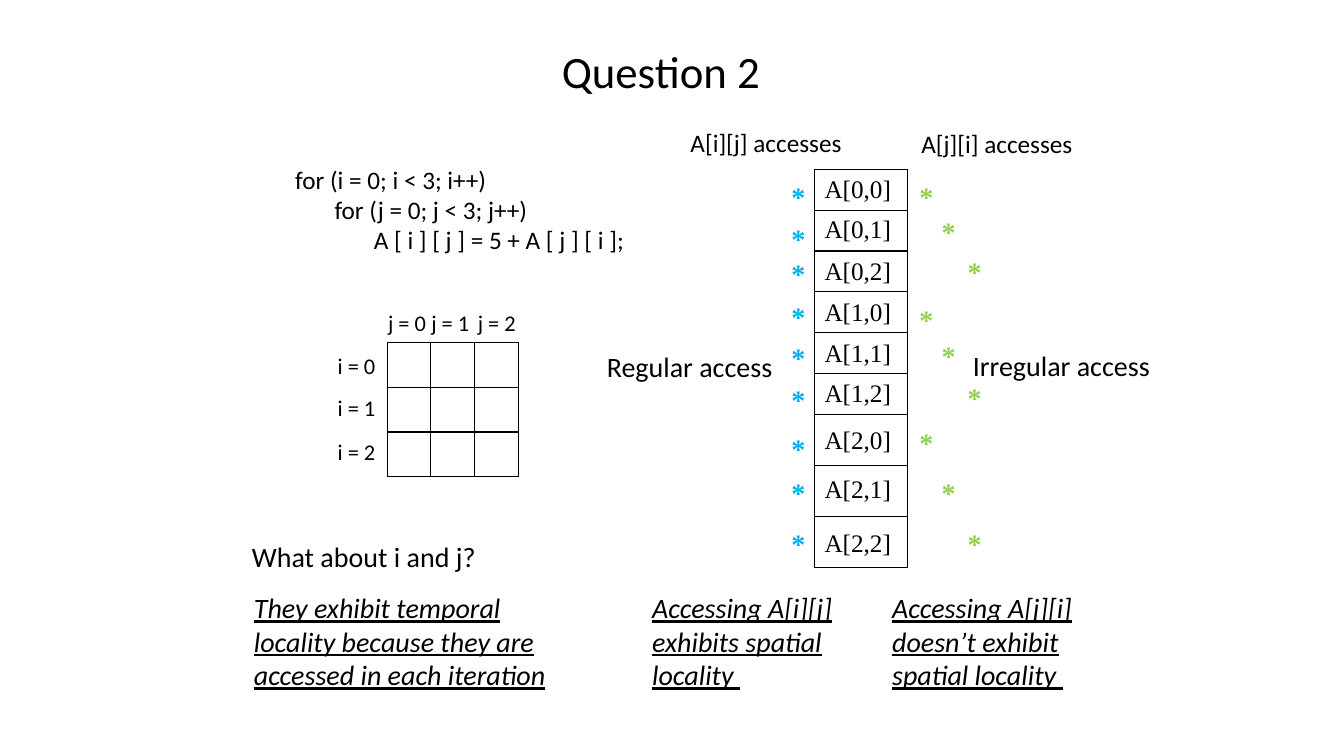
from dataclasses import dataclass

from lxml.etree import SubElement
from pptx import Presentation
from pptx.dml.color import RGBColor
from pptx.enum.text import MSO_ANCHOR, MSO_AUTO_SIZE, PP_ALIGN
from pptx.oxml import parse_xml
from pptx.oxml.ns import nsdecls, qn
from pptx.util import Inches, Pt


@dataclass(frozen=True)
class Theme:
    sans: str = "Calibri"
    serif: str = "Times New Roman"
    ink: str = "000000"
    regular: str = "00B0F0"
    irregular: str = "92D050"
    title: int = 32
    large: int = 20
    normal: int = 18
    small: int = 16
    rule: float = 1


theme = Theme()
deck = Presentation()
deck.slide_width = Inches(13.33)
deck.slide_height = Inches(7.5)
page = deck.slides.add_slide(deck.slide_layouts[5])


def add_text(text, left=0, top=0, width=1, height=0.4, size=theme.normal, font=theme.sans,
             color=theme.ink, bold=False, emphasis=False, wrap=False, indent=0, box=None):
    if box is None:
        box = page.shapes.add_textbox(Inches(left), Inches(top), Inches(width), Inches(height))
        box.text_frame.auto_size = MSO_AUTO_SIZE.SHAPE_TO_FIT_TEXT
    frame = box.text_frame
    frame.word_wrap = wrap
    for level, line in enumerate(text.split("\n")):
        para = frame.add_paragraph() if level else frame.paragraphs[0]
        if indent and level:
            para._p.get_or_add_pPr().set("marL", str(Inches(indent * level)))
        span = para.add_run()
        span.text = line
        span.font.name = font
        span.font.size = Pt(size)
        span.font.color.rgb = RGBColor.from_string(color)
        span.font.bold = bold
        span.font.italic = emphasis
        span.font.underline = emphasis
    return box


def add_grid(left, top, column_widths, row_heights):
    frame = page.shapes.add_table(len(row_heights), len(column_widths), Inches(left), Inches(top),
                                  Inches(sum(column_widths)), Inches(sum(row_heights)))
    table = frame.table
    table.first_row = False
    table.horz_banding = False
    for column, width in zip(table.columns, column_widths):
        column.width = Inches(width)
    for row, height in zip(table.rows, row_heights):
        row.height = Inches(height)
    for cell in table.iter_cells():
        cell.fill.background()
        properties = cell._tc.get_or_add_tcPr()
        for place, side in enumerate(("lnL", "lnR", "lnT", "lnB")):
            border = parse_xml(f'<a:{side} {nsdecls("a")} w="{Pt(theme.rule)}"/>')
            fill = SubElement(border, qn("a:solidFill"))
            SubElement(fill, qn("a:srgbClr")).set("val", theme.ink)
            properties.insert(place, border)


title = page.shapes.title
title.left, title.top = Inches(0.89), Inches(0.08)
title.width, title.height = Inches(11.33), Inches(1.25)
title.text_frame.vertical_anchor = MSO_ANCHOR.MIDDLE
add_text("Question 2", box=title, size=theme.title, wrap=True)
title.text_frame.paragraphs[0].alignment = PP_ALIGN.CENTER

add_text("for (i = 0; i < 3; i++)\nfor (j = 0; j < 3; j++)\nA [ i ] [ j ] = 5 + A [ j ] [ i ];",
         2.83, 1.58, 4.06, 1.01, wrap=True, indent=0.39)

add_grid(3.84, 3.4, [1.3 / 3] * 3, [1.33 / 3] * 3)
for index, (row_top, column_left) in enumerate(zip((3.44, 3.86, 4.3), (3.75, 4.18, 4.64))):
    add_text(f"i = {index}", 3.25, row_top, 0.58, 0.37, size=theme.small)
    add_text(f"j = {index}", column_left, 3.02, 0.58, 0.37, size=theme.small)

add_grid(8.08, 1.68, [0.92], [2.43 / 6] * 6 + [1.52 / 3] * 3)
label_tops = (1.67, 2.07, 2.48, 2.89, 3.3, 3.69, 4.16, 4.65, 5.18)
regular_tops = (1.73, 2.15, 2.5, 2.92, 3.33, 3.75, 4.23, 4.67, 5.17)
irregular_tops = (1.73, 2.08, 2.48, 2.95, 3.31, 3.73, 4.17, 4.67, 5.17)
irregular_lefts = (9.02, 9.24, 9.5)
star = dict(width=0.34, height=0.44, size=theme.large, font=theme.serif, bold=True)
for index, (label_top, regular_top, irregular_top) in enumerate(
        zip(label_tops, regular_tops, irregular_tops)):
    i, j = divmod(index, 3)
    add_text(f"A[{i},{j}]", 8.08, label_top, 0.87, font=theme.serif)
    add_text("*", 7.75, regular_top, color=theme.regular, **star)
    add_text("*", irregular_lefts[j], irregular_top, color=theme.irregular, **star)

add_text("A[i][j] accesses", 6.75, 1.21, 1.71)
add_text("A[j][i] accesses", 9.04, 1.22, 1.71)
add_text("Regular access", 5.92, 3.42, 1.86, 0.44, size=theme.large)
add_text("Irregular access", 9.55, 3.41, 1.98, 0.44, size=theme.large)
add_text("What about i and j?", 2.4, 5.3, 3.93, 0.44, size=theme.large, wrap=True)

answers = (
    ("They exhibit temporal locality because they are accessed in each iteration", 2.42, 3.33),
    ("Accessing A[i][j] exhibits spatial locality ", 6.37, 2.21),
    ("Accessing A[j][i] doesn’t exhibit spatial locality ", 8.75, 2.21),
)
for answer, left, width in answers:
    add_text(answer, left, 5.81, width, 1.11, size=theme.large, emphasis=True, wrap=True)

deck.save("out.pptx")
